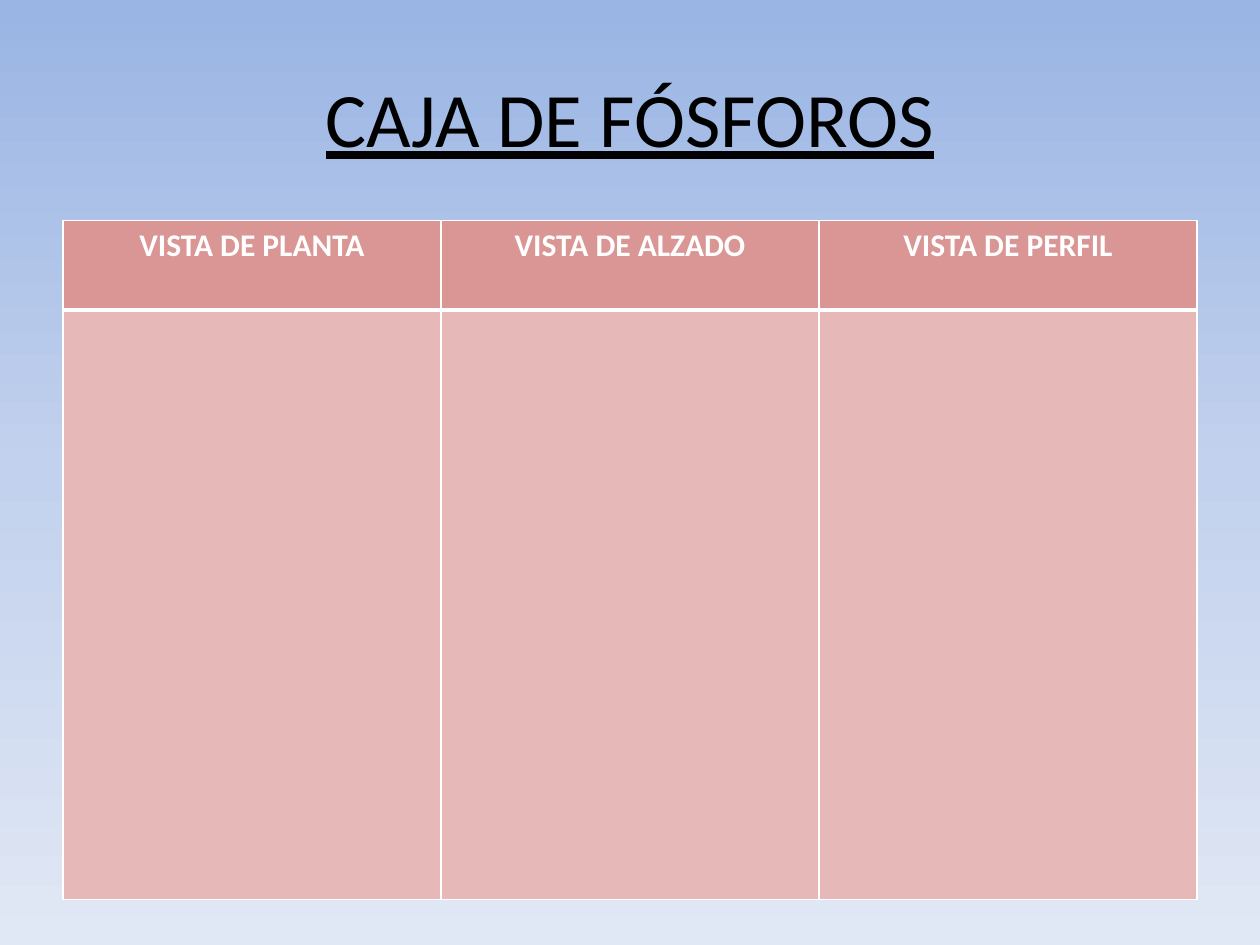
from copy import deepcopy

from lxml import etree
from pptx import Presentation
from pptx.dml.color import RGBColor
from pptx.enum.text import MSO_ANCHOR, PP_ALIGN
from pptx.oxml.ns import qn
from pptx.util import Inches, Pt

CENTER = PP_ALIGN.CENTER
MIDDLE = MSO_ANCHOR.MIDDLE
FONT = "Calibri"
WHITE = "FFFFFF"
VIEWS = ["VISTA DE PLANTA", "VISTA DE ALZADO", "VISTA DE PERFIL"]


def rgb(value):
    """Return the colour of a hex string."""
    return RGBColor.from_string(value)


def set_background(s, colors):
    """Fill the slide with evenly spaced colours from top to bottom."""
    fill = s.background.fill
    fill.gradient()
    fill.gradient_angle = 270
    stops = s.element.find(".//" + qn("a:gsLst"))
    while len(stops) < len(colors):
        stops.append(deepcopy(stops[0]))
    for i, (stop, color) in enumerate(zip(fill.gradient_stops, colors)):
        stop.position = i / (len(colors) - 1)
        stop.color.rgb = rgb(color)


def style_paragraph(p, size, color, bold=False, underline=False):
    """Centre a paragraph and set its font."""
    p.alignment = CENTER
    p.font.name = FONT
    p.font.size = Pt(size)
    p.font.color.rgb = rgb(color)
    p.font.bold = bold
    p.font.underline = underline


def add_title(s, text):
    """Add the underlined slide title."""
    sp = s.shapes.add_textbox(Inches(0.5), Inches(0.3), Inches(9), Inches(1.25))
    tf = sp.text_frame
    tf.word_wrap = True
    tf.vertical_anchor = MIDDLE
    tf.text = text
    style_paragraph(tf.paragraphs[0], 44, "000000", underline=True)


def set_border(cell, side, width):
    """Draw one white side of a cell."""
    tc_pr = cell._tc.get_or_add_tcPr()
    ln = etree.SubElement(tc_pr, qn("a:ln" + side), w=str(Pt(width)))
    fill = etree.SubElement(ln, qn("a:solidFill"))
    etree.SubElement(fill, qn("a:srgbClr"), val=WHITE)


def style_cell(cell, color, top, bottom):
    """Set the borders and fill of a cell."""
    for side, width in zip("LRTB", (1, 1, top, bottom)):
        set_border(cell, side, width)
    cell.fill.solid()
    cell.fill.fore_color.rgb = rgb(color)


def add_views_table(s, views):
    """Add a table with a heading and a drawing area for each view."""
    heights = [0.71, 4.68]
    frame = s.shapes.add_table(2, len(views), Inches(0.5), Inches(1.75),
                               Inches(9), Inches(sum(heights)))
    table = frame.table
    for row, height in zip(table.rows, heights):
        row.height = Inches(height)
    for i, view in enumerate(views):
        head, body = table.cell(0, i), table.cell(1, i)
        head.text = view
        style_paragraph(head.text_frame.paragraphs[0], 18, WHITE, bold=True)
        style_cell(head, "D99694", 1, 3)
        style_cell(body, "E6B9B8", 3, 1)


def main():
    """Build and save the slide."""
    prs = Presentation()
    prs.slide_width, prs.slide_height = Inches(10), Inches(7.5)
    s = prs.slides.add_slide(prs.slide_layouts[6])
    set_background(s, ["9AB5E4", "C2D1ED", "E1E8F5"])
    add_title(s, "CAJA DE FÓSFOROS")
    add_views_table(s, VIEWS)
    prs.save("out.pptx")


if __name__ == "__main__":
    main()
